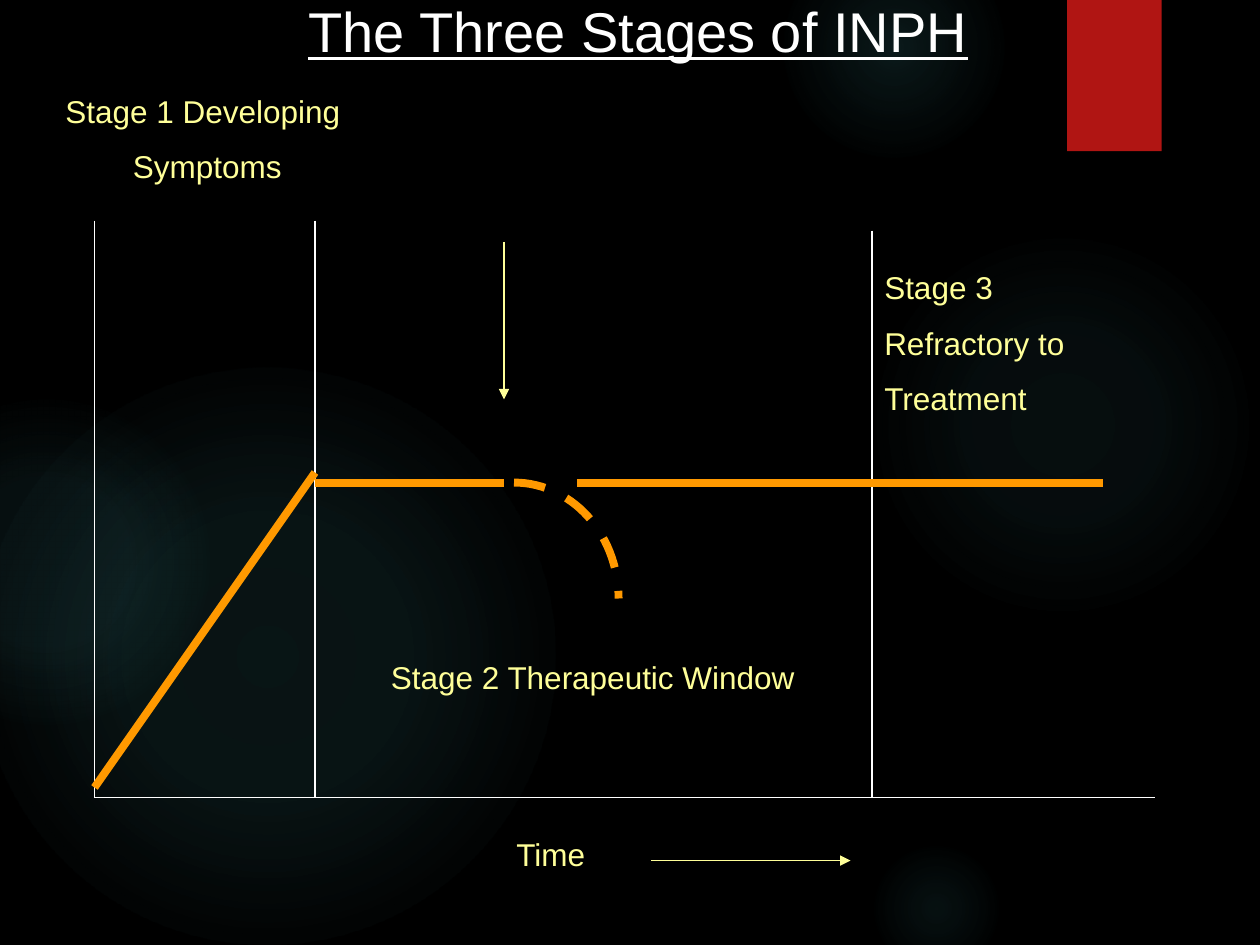
import math

from lxml import etree
from pptx import Presentation
from pptx import util as u
from pptx.dml.color import RGBColor
from pptx.enum import dml, shapes, text
from pptx.oxml import ns

BLACK = RGBColor(0x00, 0x00, 0x00)
WHITE = RGBColor(0xFF, 0xFF, 0xFF)
YELLOW = RGBColor(0xFF, 0xFF, 0x99)
ORANGE = RGBColor(0xFF, 0x99, 0x00)
RED = RGBColor(0xB0, 0x15, 0x13)
TEAL = RGBColor(0x50, 0xB9, 0xC1)


def add_xml(parent, tag, **attributes):
    return etree.SubElement(parent, ns.qn(tag), attributes)


class SlideBuilder:
    """Holds the text style and the slide being drawn."""

    font_name = "Arial"
    body_size = 18
    para_gap = 10

    def __init__(self, page):
        self.page = page

    def background(self, color):
        fill = self.page.background.fill
        fill.solid()
        fill.fore_color.rgb = color

    def shape(self, kind, left, top, width, height):
        shape = self.page.shapes.add_shape(
            kind, *map(u.Inches, (left, top, width, height)))
        shape.shadow.inherit = False
        shape.line.fill.background()
        return shape

    def block(self, left, top, width, height, color):
        block = self.shape(shapes.MSO_SHAPE.RECTANGLE, left, top, width, height)
        block.fill.solid()
        block.fill.fore_color.rgb = color

    def glow(self, left, top, size, stops):
        """Circle fading outwards; stops are (position, opacity) in percent."""
        glow = self.shape(shapes.MSO_SHAPE.OVAL, left, top, size, size)
        glow.fill.background()
        properties = glow.element.spPr
        gradient = etree.Element(ns.qn("a:gradFill"), rotWithShape="1")
        stop_list = add_xml(gradient, "a:gsLst")
        for position, opacity in stops:
            stop = add_xml(stop_list, "a:gs", pos=str(position * 1000))
            color = add_xml(stop, "a:srgbClr", val=str(TEAL))
            add_xml(color, "a:alpha", val=str(opacity * 1000))
        shade = add_xml(gradient, "a:path", path="circle")
        add_xml(shade, "a:fillToRect", l="50000", t="50000", r="50000", b="50000")
        properties.replace(properties.find(ns.qn("a:noFill")), gradient)

    def line(self, start, end, color, width=0.75, arrow=False):
        line = self.page.shapes.add_connector(
            shapes.MSO_CONNECTOR.STRAIGHT, *map(u.Inches, (*start, *end)))
        line.line.color.rgb = color
        line.line.width = u.Pt(width)
        properties = line.element.spPr
        if arrow:
            add_xml(properties.find(ns.qn("a:ln")), "a:tailEnd", type="triangle")
        add_xml(properties, "a:effectLst")

    def dashed_quarter(self, left, top, width, height, color, line_width, steps=30):
        """Quarter ellipse falling from top left to bottom right."""
        angles = [math.pi / 2 * step / steps for step in range(steps + 1)]
        points = [(u.Inches(left + width * math.sin(angle)),
                   u.Inches(top + height * (1 - math.cos(angle))))
                  for angle in angles]
        builder = self.page.shapes.build_freeform(*points[0])
        builder.add_line_segments(points[1:], close=False)
        curve = builder.convert_to_shape()
        curve.shadow.inherit = False
        curve.fill.background()
        curve.line.color.rgb = color
        curve.line.width = u.Pt(line_width)
        curve.line.dash_style = dml.MSO_LINE.DASH

    def label(self, left, top, width, height, lines, color=YELLOW,
              size=body_size, align=text.PP_ALIGN.LEFT, underline=None):
        box = self.page.shapes.add_textbox(
            *map(u.Inches, (left, top, width, height)))
        frame = box.text_frame
        frame.word_wrap = True
        frame.text = "\n".join(lines)
        for index, para in enumerate(frame.paragraphs):
            para.alignment = align
            if index:
                para.space_before = u.Pt(self.para_gap)
            para.font.name = self.font_name
            para.font.size = u.Pt(size)
            para.font.color.rgb = color
            para.font.underline = underline


def main():
    deck = Presentation()
    deck.slide_width, deck.slide_height = u.Inches(10), u.Inches(7.5)
    slide = SlideBuilder(deck.slides.add_slide(deck.slide_layouts[6]))

    # Backdrop: soft glows and the red tab
    slide.background(BLACK)
    slide.glow(6.89, 1.83, 3.08, [(0, 7), (36, 6), (69, 0)])
    slide.glow(6.22, -0.5, 1.75, [(0, 14), (36, 7), (73, 0)])
    slide.glow(6.89, 6.67, 1.08, [(0, 9), (36, 5), (66, 0)])
    slide.glow(-0.17, 2.92, 4.58, [(0, 11), (36, 10), (75, 0)])
    slide.glow(-0.92, 3.17, 2.58, [(0, 8), (36, 8), (72, 0)])
    slide.block(8.47, 0, 0.75, 1.2, RED)

    # Axes and stage dividers
    origin, stage_2, stage_3 = 0.75, 2.5, 6.92
    baseline, plateau = 6.33, 3.83
    slide.line((origin, baseline), (9.17, baseline), WHITE)
    for x, top in ((origin, 1.75), (stage_2, 1.75), (stage_3, 1.83)):
        slide.line((x, top), (x, baseline), WHITE)

    # Symptom course, with the dashed branch after treatment
    slide.line((origin, 6.25), (stage_2, 3.75), ORANGE, 4.5)
    slide.line((stage_2, plateau), (4, plateau), ORANGE, 4.5)
    slide.dashed_quarter(4.08, plateau, 0.83, 0.92, ORANGE, 4.5)
    slide.line((4.58, plateau), (8.75, plateau), ORANGE, 4.5)

    # Treatment and time arrows
    slide.line((4, 1.92), (4, 3.17), YELLOW, arrow=True)
    slide.line((5.17, 6.83), (6.75, 6.83), YELLOW, arrow=True)

    # Labels and title
    center = text.PP_ALIGN.CENTER
    slide.label(2.58, 5.17, 4.25, 0.9, ["Stage 2 Therapeutic Window"], align=center)
    slide.label(0.04, 0.68, 3.21, 1.1, ["Stage 1 Developing ", "Symptoms"], align=center)
    slide.label(stage_3, 2.08, 2.2, 1.7, ["Stage 3", "Refractory to", "Treatment"])
    slide.label(4, 6.58, 4.42, 0.5, ["Time"])
    slide.label(2.35, -0.08, 5.67, 0.64, ["The Three Stages of INPH"],
                color=WHITE, size=32, underline=True)

    deck.save("out.pptx")


if __name__ == "__main__":
    main()
